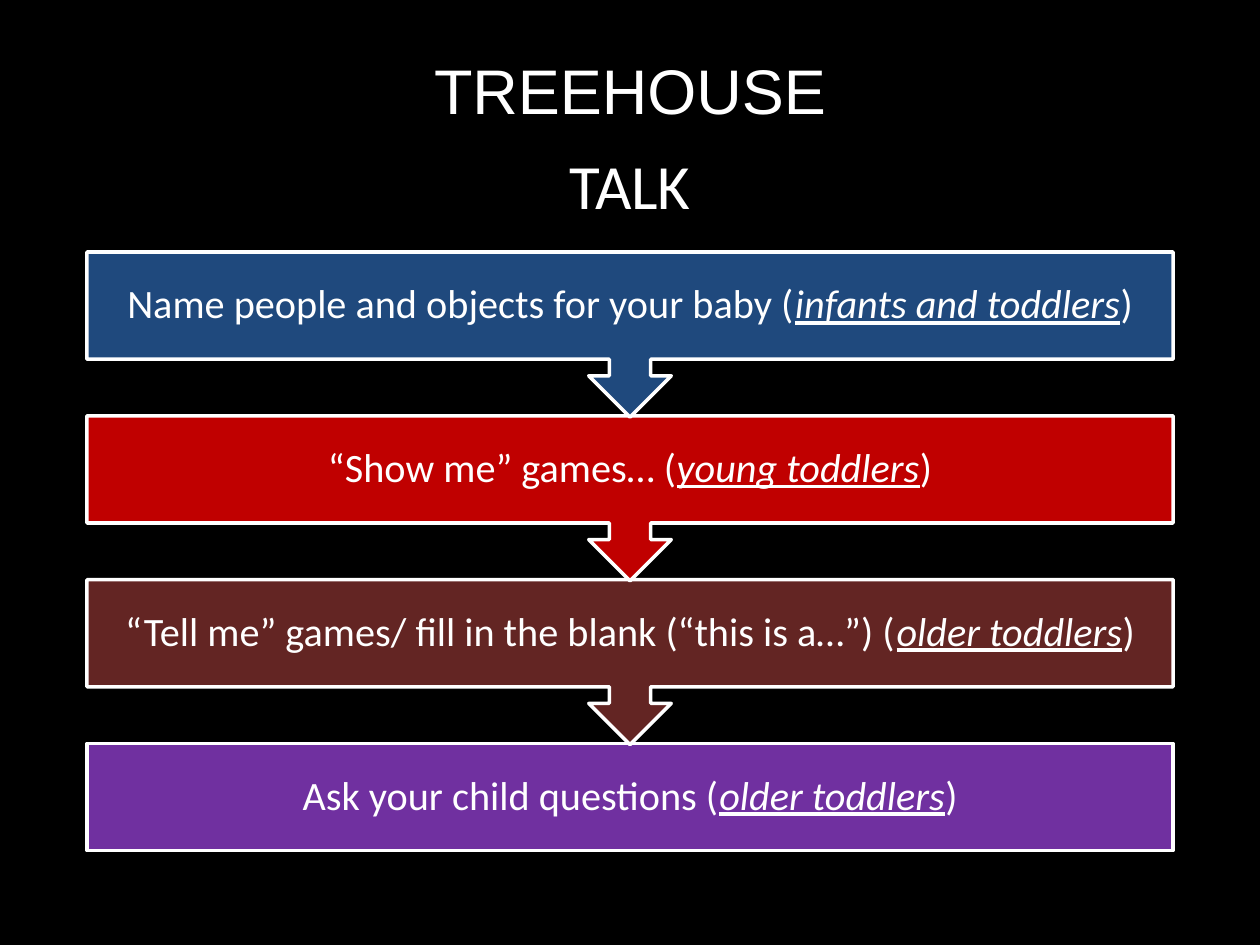
from dataclasses import dataclass

from pptx import Presentation
from pptx import util as u
from pptx.dml.color import RGBColor
from pptx.enum import shapes, text


@dataclass(frozen=True)
class Theme:
    background: str = "000000"
    ink: str = "FFFFFF"
    title_font: str = "Arial"
    body_font: str = "Calibri"
    title_size: float = 36
    body_size: float = 23
    outline: float = 2
    line_spacing: float = 0.9


@dataclass(frozen=True)
class Step:
    activity: str
    age_group: str
    fill: str


THEME = Theme()
WIDTH, HEIGHT = 10, 7.5

# Column and row grid, in inches
LEFT = 0.69
COLUMN = WIDTH - 2 * LEFT
FIRST_ROW, ROW_PITCH = 2.0, 1.3
BOX_HEIGHT, CALLOUT_HEIGHT = 0.85, 1.31
INSET = 0.18

STEPS = [
    Step("Name people and objects for your baby", "infants and toddlers", "1F497D"),
    Step("“Show me” games…", "young toddlers", "C00000"),
    Step("“Tell me” games/ fill in the blank (“this is a…”)", "older toddlers", "632523"),
    Step("Ask your child questions", "older toddlers", "7030A0"),
]


def add_span(para, words: str, *, font: str, size: float, emphasis: bool = False) -> None:
    span = para.add_run()
    span.text = words
    span.font.name = font
    span.font.size = u.Pt(size)
    span.font.color.rgb = RGBColor.from_string(THEME.ink)
    span.font.italic = span.font.underline = emphasis


def format_paragraph(para) -> None:
    para.alignment = text.PP_ALIGN.CENTER
    para.line_spacing = THEME.line_spacing


def fill_title(title) -> None:
    title.left, title.top = u.Inches(LEFT), u.Inches(0.4)
    title.width, title.height = u.Inches(COLUMN), u.Inches(1.45)
    frame = title.text_frame
    frame.auto_size = text.MSO_AUTO_SIZE.NONE
    frame.vertical_anchor = text.MSO_ANCHOR.MIDDLE
    first, second = frame.paragraphs[0], frame.add_paragraph()
    second.space_before = u.Pt(15)
    for para, words, font in ((first, "TREEHOUSE", THEME.title_font),
                              (second, "TALK", THEME.body_font)):
        format_paragraph(para)
        add_span(para, words, font=font, size=THEME.title_size)


def add_step(page, step: Step, row: int, is_last: bool) -> None:
    kind = shapes.MSO_SHAPE.RECTANGLE if is_last else shapes.MSO_SHAPE.DOWN_ARROW_CALLOUT
    box = page.shapes.add_shape(
        kind, u.Inches(LEFT), u.Inches(FIRST_ROW + row * ROW_PITCH),
        u.Inches(COLUMN), u.Inches(BOX_HEIGHT if is_last else CALLOUT_HEIGHT))
    box.shadow.inherit = False
    box.fill.solid()
    box.fill.fore_color.rgb = RGBColor.from_string(step.fill)
    box.line.color.rgb = RGBColor.from_string(THEME.ink)
    box.line.width = u.Pt(THEME.outline)

    frame = box.text_frame
    frame.word_wrap = True
    frame.vertical_anchor = text.MSO_ANCHOR.MIDDLE
    frame.margin_left = frame.margin_right = u.Inches(INSET)
    frame.margin_top = frame.margin_bottom = u.Inches(INSET)
    para = frame.paragraphs[0]
    format_paragraph(para)
    for words, emphasis in ((f"{step.activity} (", False), (step.age_group, True), (")", False)):
        add_span(para, words, font=THEME.body_font, size=THEME.body_size, emphasis=emphasis)


def main() -> None:
    deck = Presentation()
    deck.slide_width, deck.slide_height = u.Inches(WIDTH), u.Inches(HEIGHT)
    page = deck.slides.add_slide(deck.slide_layouts.get_by_name("Title Only"))
    page.background.fill.solid()
    page.background.fill.fore_color.rgb = RGBColor.from_string(THEME.background)

    fill_title(page.shapes.title)

    # Bottom step first, so each arrow tip overlaps the box below it
    last = len(STEPS) - 1
    for row in range(last, -1, -1):
        add_step(page, STEPS[row], row, is_last=row == last)

    deck.save("out.pptx")


if __name__ == "__main__":
    main()
